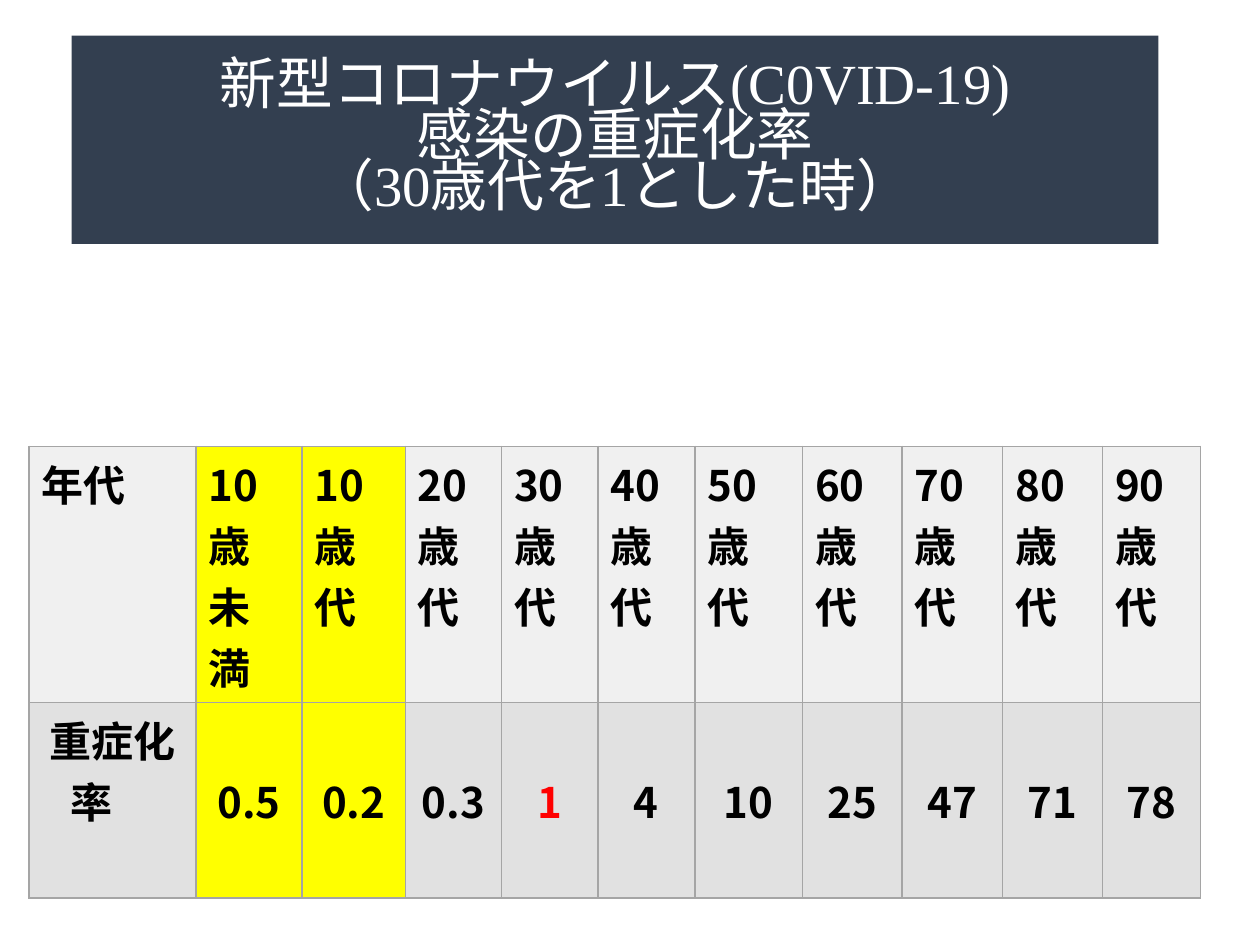
"""Build a slide with a table of COVID-19 severity rates by age group."""
from lxml.etree import SubElement
from pptx import Presentation
from pptx.dml.color import RGBColor as RGB
from pptx.enum.shapes import MSO_SHAPE as SHAPE
from pptx.enum.text import MSO_ANCHOR as ANCHOR, PP_ALIGN as ALIGN
from pptx.oxml.ns import qn
from pptx.util import Pt

TITLE = "新型コロナウイルス(C0VID-19)\v感染の重症化率\v（30歳代を1とした時）"
HEADER, LABEL = "年代", "重症化率　"
RATES = [
    ("10歳\n未満", "0.5"), ("10歳代", "0.2"), ("20歳代", "0.3"),
    ("30歳代", "1"), ("40歳代", "4"), ("50歳代", "10"), ("60歳代", "25"),
    ("70歳代", "47"), ("80歳代", "71"), ("90歳代", "78"),
]
COL_WIDTHS = [95.5, 60.5, 59, 55, 55, 55.5, 61.5, 57, 57.5, 57, 56]
ROW_HEIGHTS = [146.2, 111.6]
YOUNG_COLS, BASE_COL = (1, 2), 4
COLORS = {
    "banner": "333F50", "white": "FFFFFF", "text": "000000", "base": "FF0000",
    "young": "FFFF00", "ages": "F0F0F0", "rates": "E1E1E1", "border": "A5A5A5",
}
SERIF, SANS = "Times New Roman", "Noto Sans CJK JP"
LINE_PITCH = 35


def rgb(name):
    return RGB.from_string(COLORS[name])


def format_text(tf, font, size, color, align, bold=False):
    for p in tf.paragraphs:
        p.alignment = align
        for r in p.runs:
            r.font.name, r.font.size, r.font.bold = font, Pt(size), bold
            r.font.color.rgb = rgb(color)
            SubElement(r.font._element, qn("a:ea"), typeface=SANS)


def add_borders(cell):
    tcPr = cell._tc.get_or_add_tcPr()
    for i, side in enumerate(("lnL", "lnR", "lnT", "lnB")):
        ln = SubElement(tcPr, qn(f"a:{side}"), w=str(Pt(1)))
        fill = SubElement(ln, qn("a:solidFill"))
        SubElement(fill, qn("a:srgbClr"), val=COLORS["border"])
        tcPr.insert(i, ln)


def add_banner(s):
    sp = s.shapes.add_shape(SHAPE.RECTANGLE, Pt(41), Pt(20.4), Pt(621), Pt(119))
    sp.shadow.inherit = False
    sp.fill.solid()
    sp.fill.fore_color.rgb = rgb("banner")
    sp.line.fill.background()
    tf = sp.text_frame
    tf.word_wrap = True
    tf.vertical_anchor = ANCHOR.MIDDLE
    tf.text = TITLE
    tf.paragraphs[0].line_spacing = 0.75
    format_text(tf, SERIF, 32.4, "white", ALIGN.CENTER)


def add_rate_table(s):
    ages, rates = zip((HEADER, LABEL), *RATES)
    table = s.shapes.add_table(
        2, len(ages), Pt(16.6), Pt(255), Pt(sum(COL_WIDTHS)), Pt(sum(ROW_HEIGHTS))
    ).table
    for col, width in zip(table.columns, COL_WIDTHS):
        col.width = Pt(width)
    for row, height in zip(table.rows, ROW_HEIGHTS):
        row.height = Pt(height)
    for i, (texts, band) in enumerate(((ages, "ages"), (rates, "rates"))):
        for j, text in enumerate(texts):
            cell = table.cell(i, j)
            cell.text_frame.text = text
            color = "base" if (i, j) == (1, BASE_COL) else "text"
            align = ALIGN.CENTER if i else ALIGN.LEFT
            format_text(cell.text_frame, SANS, 24, color, align, bold=True)
            if i and j:
                cell.margin_top = Pt(3.6 + LINE_PITCH)
            cell.fill.solid()
            cell.fill.fore_color.rgb = rgb("young" if j in YOUNG_COLS else band)
            add_borders(cell)


def main():
    prs = Presentation()
    prs.slide_width, prs.slide_height = Pt(720), Pt(540)
    s = prs.slides.add_slide(prs.slide_layouts[6])
    add_banner(s)
    add_rate_table(s)
    prs.save("out.pptx")


if __name__ == "__main__":
    main()
